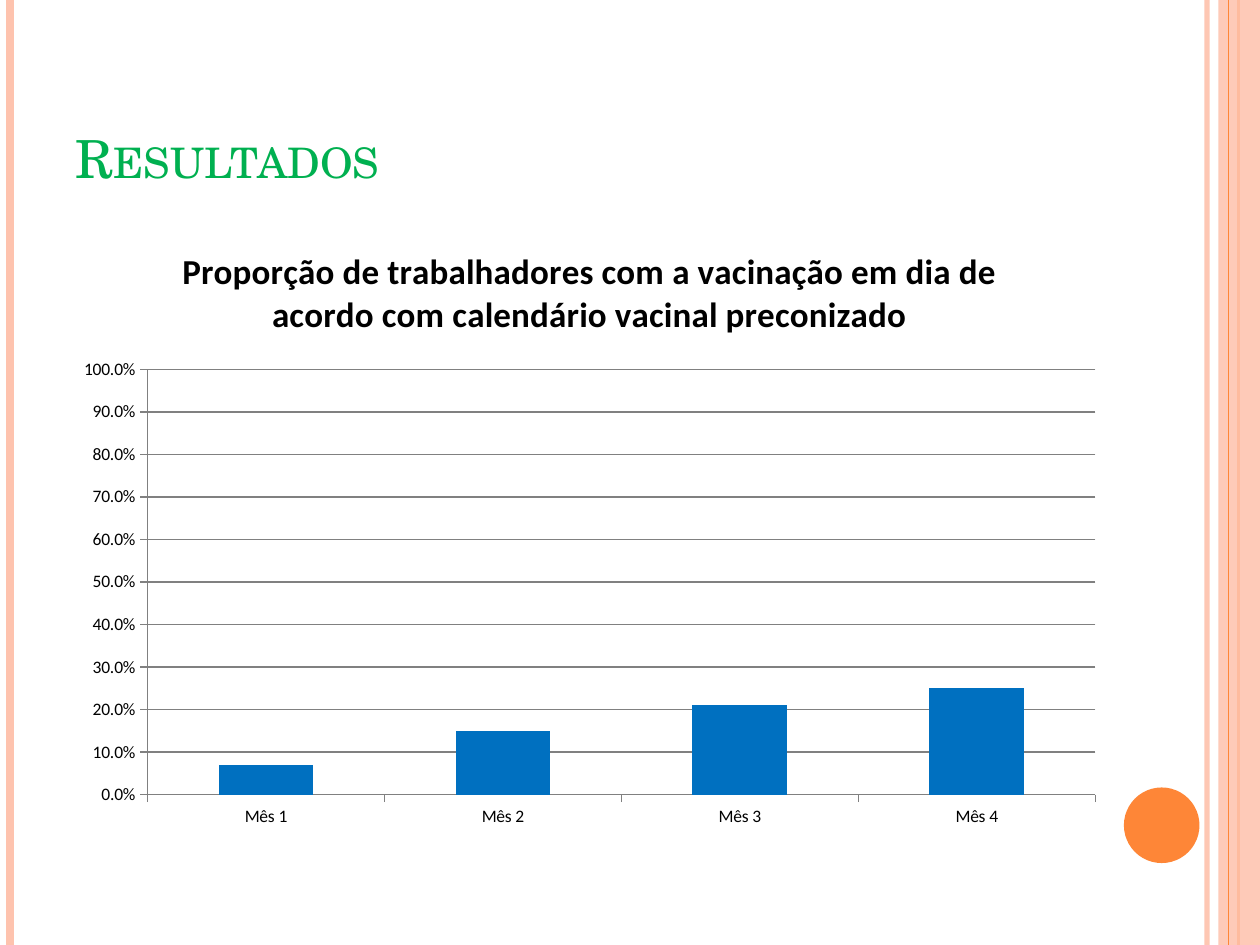
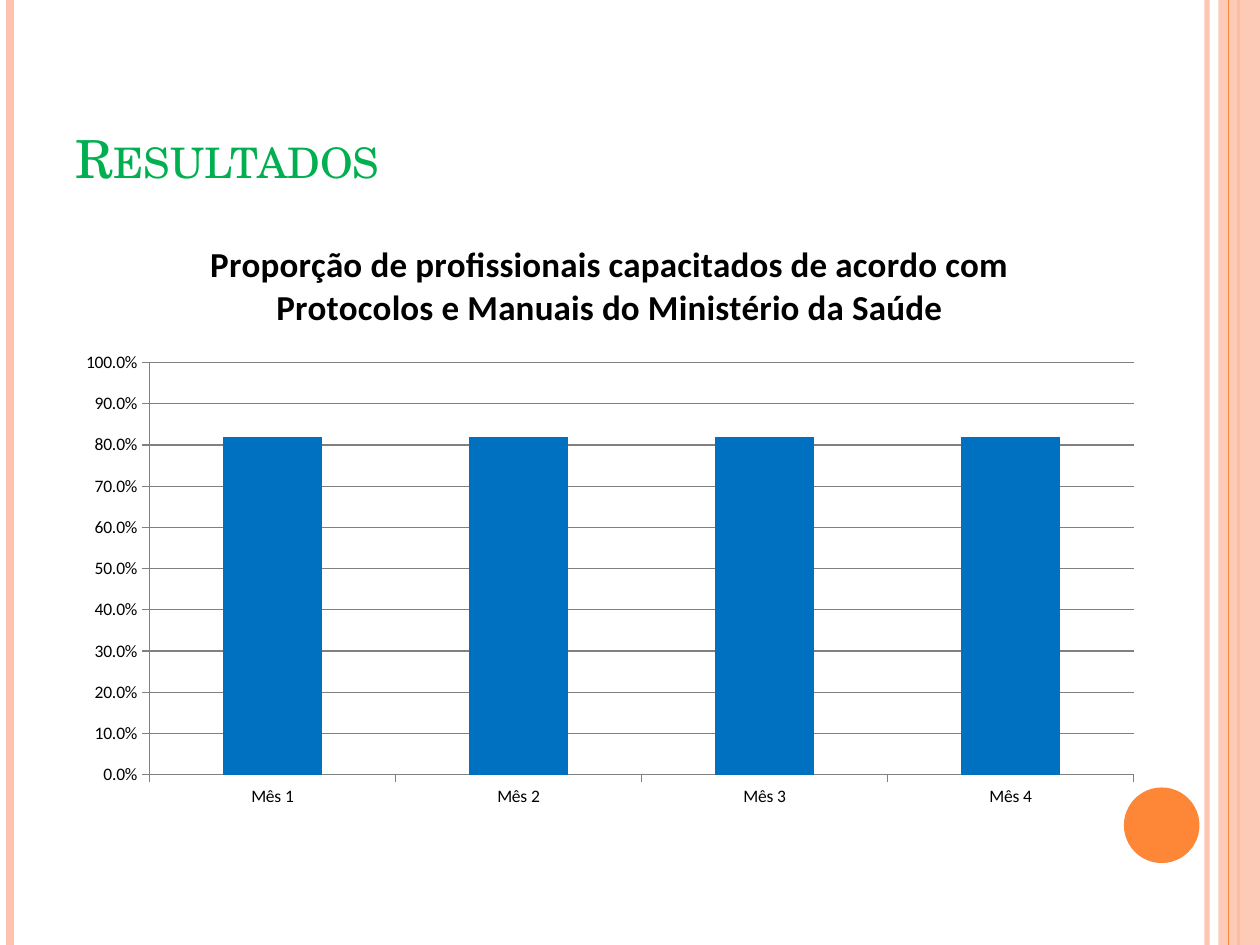
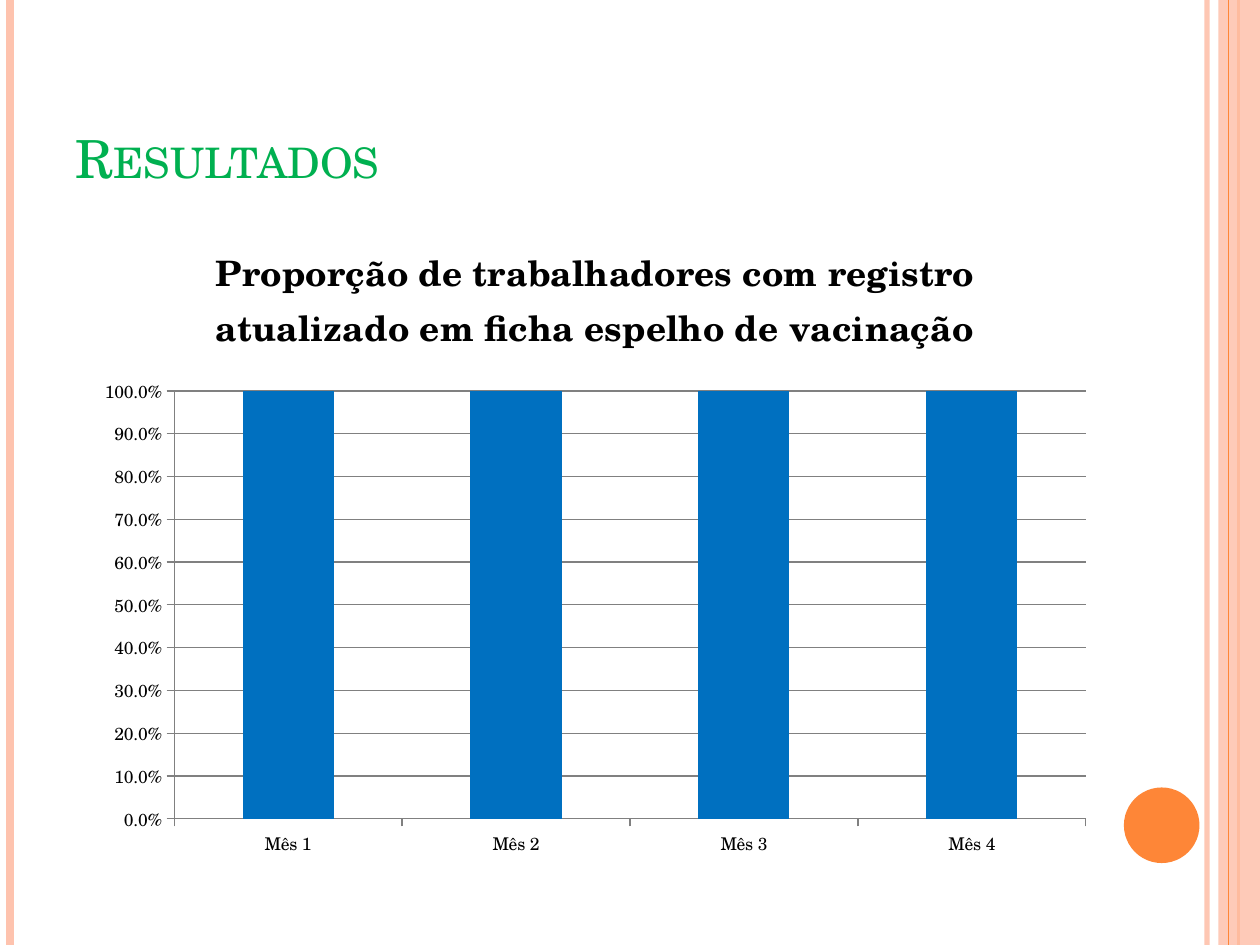
"""Build three results slides, each with a title and a monthly column chart."""
from lxml.etree import SubElement
from pptx import Presentation
from pptx.chart.data import CategoryChartData
from pptx.dml.color import RGBColor
from pptx.enum.chart import XL_CHART_TYPE, XL_TICK_MARK
from pptx.enum.shapes import MSO_CONNECTOR, MSO_SHAPE
from pptx.enum.text import MSO_ANCHOR
from pptx.oxml.ns import qn
from pptx.util import Inches, Pt

WIDTH, HEIGHT = 10, 7.5
PEACH, ORANGE, GREEN, BLUE, GRAY, BLACK = (
    "FEC3AE", "FE8637", "00B050", "0070C0", "808080", "000000")
SERIF, SANS = "TeX Gyre Schola", "Calibri"

TITLE = "Resultados"
MONTHS = ["Mês 1", "Mês 2", "Mês 3", "Mês 4"]
CHARTS = [
    {"title": "Proporção de trabalhadores com a vacinação em dia de acordo com "
              "calendário vacinal preconizado",
     "values": [0.07, 0.15, 0.21, 0.25], "font": SANS, "box": (0.5, 1.75, 8.36, 4.91)},
    {"title": "Proporção de profissionais capacitados de acordo com Protocolos e "
              "Manuais do Ministério da Saúde",
     "values": [0.82] * 4, "font": SANS, "box": (0.51, 1.7, 8.66, 4.8)},
    {"title": "Proporção de trabalhadores com registro atualizado em ficha espelho "
              "de vacinação",
     "values": [1] * 4, "font": SERIF, "box": (0.67, 1.7, 8.11, 5.2)},
]
# x, colour, width in points, opacity in percent
LINES_BEHIND_BAND = [(9.58, PEACH, 3, 93), (0.08, PEACH, 4.5, 100), (9.83, ORANGE, 1.5, 100)]
LINES_OVER_BAND = [(9.75, ORANGE, 0.75, 100)]


def paint(fill, color, opacity=100):
    fill.solid()
    fill.fore_color.rgb = RGBColor.from_string(color)
    if opacity < 100:
        color_element = fill._xPr.find(qn("a:solidFill"))[0]
        SubElement(color_element, qn("a:alpha"), val=str(opacity * 1000))


def add_vertical_line(slide, x, color, width, opacity):
    line = slide.shapes.add_connector(
        MSO_CONNECTOR.STRAIGHT, Inches(x), 0, Inches(x), Inches(HEIGHT))
    line.line.width = Pt(width)
    paint(line.line.fill, color, opacity)
    SubElement(line._element.spPr, qn("a:effectLst"))


def add_filled_shape(slide, kind, box, color, opacity=100):
    shape = slide.shapes.add_shape(kind, *map(Inches, box))
    shape.shadow.inherit = False
    shape.line.fill.background()
    paint(shape.fill, color, opacity)


def add_frame(slide):
    for line in LINES_BEHIND_BAND:
        add_vertical_line(slide, *line)
    add_filled_shape(slide, MSO_SHAPE.RECTANGLE, (9.67, 0, WIDTH - 9.67, HEIGHT), PEACH, 87)
    for line in LINES_OVER_BAND:
        add_vertical_line(slide, *line)
    add_filled_shape(slide, MSO_SHAPE.OVAL, (8.92, 6.25, 0.6, 0.6), ORANGE)


def style_font(font, name, size, color, bold=False):
    font.name, font.size, font.bold = name, Pt(size), bold
    font.color.rgb = RGBColor.from_string(color)


def add_title(slide):
    box = slide.shapes.add_textbox(*map(Inches, (0.5, 0.3, 8.17, 1.25)))
    frame = box.text_frame
    frame.word_wrap = True
    frame.vertical_anchor = MSO_ANCHOR.BOTTOM
    paragraph = frame.paragraphs[0]
    run = paragraph.add_run()
    run.text = TITLE
    run._r.get_or_add_rPr().set("cap", "small")
    style_font(paragraph.font, SERIF, 30, GREEN)


def style_line(line):
    line.width = Pt(0.75)
    paint(line.fill, GRAY)


def add_column_chart(slide, title, values, font, box):
    data = CategoryChartData(number_format="0.0%")
    data.categories = MONTHS
    data.add_series(title, values)
    chart = slide.shapes.add_chart(
        XL_CHART_TYPE.COLUMN_CLUSTERED, *map(Inches, box), data).chart
    style_font(chart.font, font, 10, BLACK)
    chart.has_legend = False
    chart.has_title = True
    chart.chart_title.include_in_layout = False
    paragraph = chart.chart_title.text_frame.paragraphs[0]
    paragraph.add_run().text = title
    style_font(paragraph.font, font, 20, BLACK, bold=True)

    plot = chart.plots[0]
    plot.gap_width = 150
    plot.vary_by_categories = False
    paint(plot.series[0].format.fill, BLUE)

    for axis in (chart.category_axis, chart.value_axis):
        axis.major_tick_mark = XL_TICK_MARK.OUTSIDE
        axis.minor_tick_mark = XL_TICK_MARK.NONE
        style_line(axis.format.line)
    value_axis = chart.value_axis
    value_axis.minimum_scale, value_axis.maximum_scale, value_axis.major_unit = 0, 1, 0.1
    value_axis.tick_labels.number_format = "0.0%"
    value_axis.tick_labels.number_format_is_linked = False
    value_axis.has_major_gridlines = True
    style_line(value_axis.major_gridlines.format.line)


def main():
    presentation = Presentation()
    presentation.slide_width, presentation.slide_height = Inches(WIDTH), Inches(HEIGHT)
    for content in CHARTS:
        slide = presentation.slides.add_slide(presentation.slide_layouts[6])
        add_frame(slide)
        add_title(slide)
        add_column_chart(slide, **content)
    presentation.save("out.pptx")


if __name__ == "__main__":
    main()
